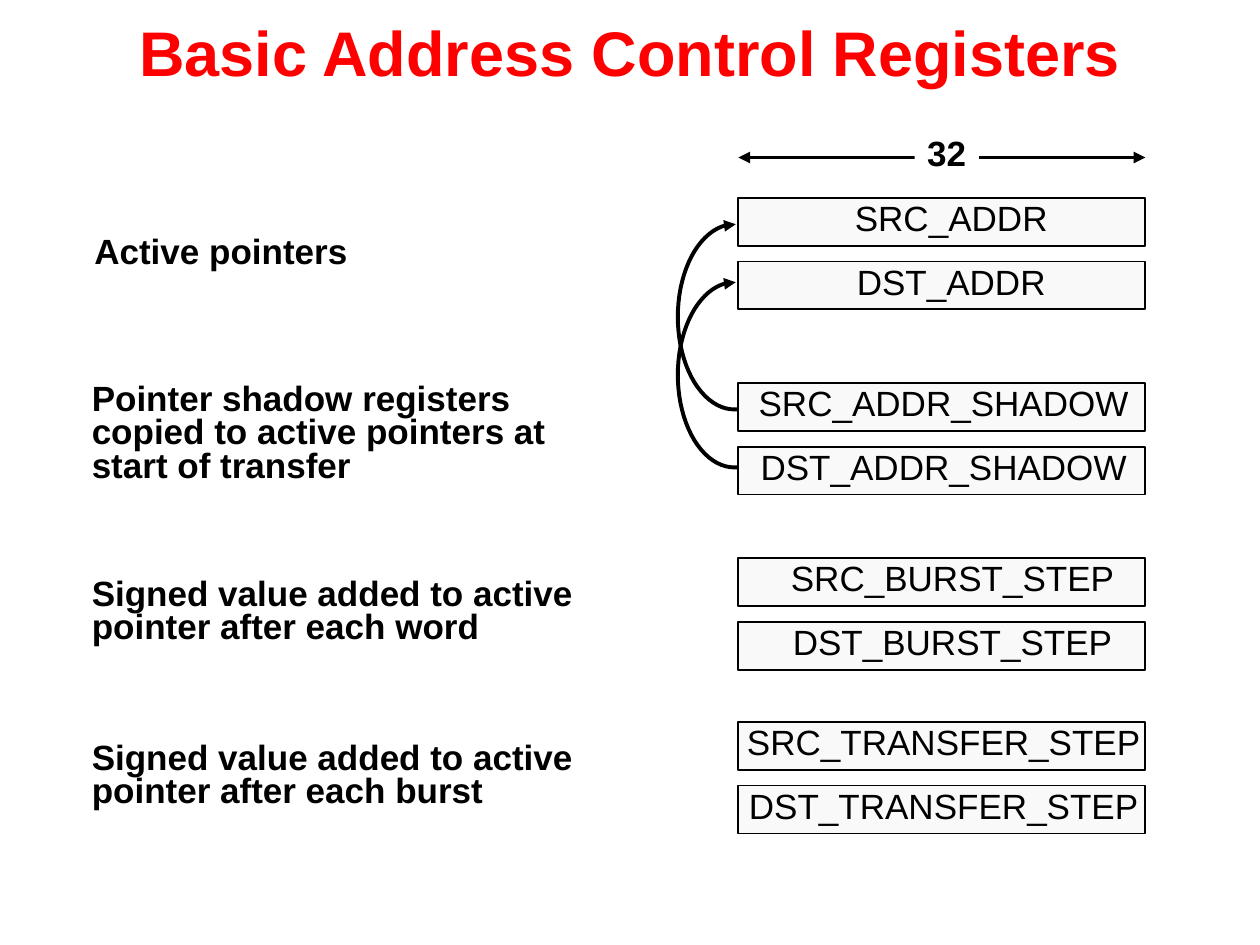
from math import cos, pi, sin

from pptx import Presentation
from pptx.dml.color import RGBColor
from pptx.enum.shapes import MSO_CONNECTOR as Link, MSO_SHAPE as Shape
from pptx.enum.text import MSO_ANCHOR as Anchor, MSO_AUTO_SIZE as Fit, PP_ALIGN as Align
from pptx.oxml.ns import qn
from pptx.util import Inches, Pt
from lxml.etree import SubElement

RED = RGBColor(0xFF, 0, 0)
BLACK = RGBColor(0, 0, 0)
WHITE = RGBColor(0xFF, 0xFF, 0xFF)
PALE = RGBColor(0xF9, 0xF9, 0xF9)

# The slide is a grid of 100 columns by 75 rows.
COLS, ROWS = 100, 75
CELL = Inches(0.1)
LEFT, WIDE, HIGH = 58.6, 32.3, 3.8
TEXT_H = 3.7
STEP = 5.05

# Stem, top row, text centre column, widths of the SRC and DST texts
PAIRS = [
    ("ADDR", 15.7, 75.5, (17.3, 17)),
    ("ADDR_SHADOW", 30.4, 74.9, (31.4, 31.1)),
    ("BURST_STEP", 44.3, 75.6, (27.7, 27.4)),
    ("TRANSFER_STEP", 57.3, 74.9, (33.3, 33)),
]
NOTES = [
    ("Active pointers", 6.5, 18.4, 23.1, 3.7),
    ("Pointer shadow registers copied to active pointers at start of transfer",
     6.3, 30, 39.9, 9),
    ("Signed value added to active pointer after each word", 6.3, 45.5, 43.2, 6.4),
    ("Signed value added to active pointer after each burst", 6.3, 58.5, 43.2, 6.4),
]


def grid(*cells):
    return [round(n * CELL) for n in cells]


def write(shape, text, size=20, bold=False, align=Align.LEFT, wrap=True, lead=0.8):
    frame = shape.text_frame
    frame.word_wrap = wrap
    frame.vertical_anchor = Anchor.TOP
    para = frame.paragraphs[0]
    para.text = text
    para.alignment = align
    para.line_spacing = lead
    font = para.font
    font.name, font.size, font.bold = "Arial", Pt(size), bold
    font.color.rgb = RED if size > 20 else BLACK
    return frame


def add_rect(shapes, x, y, w, h, fill):
    rect = shapes.add_shape(Shape.RECTANGLE, *grid(x, y, w, h))
    rect.shadow.inherit = False
    rect.fill.solid()
    rect.fill.fore_color.rgb = fill
    return rect


def add_cell(slide, name, y, mid, wide):
    """Group a register's frame with its name."""
    group = slide.shapes.add_group_shape().shapes
    rect = add_rect(group, LEFT, y, WIDE, HIGH, PALE)
    rect.line.color.rgb = BLACK
    rect.line.width = Pt(1)
    box = group.add_textbox(*grid(mid - wide / 2, y + 0.05, wide, TEXT_H))
    frame = write(box, name, align=Align.CENTER, wrap=False)
    frame.auto_size = Fit.SHAPE_TO_FIT_TEXT


def add_note(slide, text, *place):
    box = slide.shapes.add_textbox(*grid(*place))
    write(box, text, bold=True).auto_size = Fit.SHAPE_TO_FIT_TEXT


def ink(shape, *ends):
    """Draw a thick black line with arrowheads at the given ends."""
    shape.line.color.rgb = BLACK
    shape.line.width = Pt(2.25)
    line = shape.line._get_or_add_ln()
    for end in ends:
        SubElement(line, qn(f"a:{end}"), type="triangle")


def add_curve(slide, y):
    """Bend a half ellipse from a shadow register up to its pointer."""
    mid, rx, ry, count = 58.3, 4.5, 7.35, 40
    turns = [pi / 2 + pi * n / count for n in range(count + 1)]
    points = [grid(mid + rx * cos(a), y + ry + ry * sin(a)) for a in turns]
    pen = slide.shapes.build_freeform(*grid(58.5, y + 2 * ry))
    pen.add_line_segments(points + [grid(58.4, y)], close=False)
    curve = pen.convert_to_shape()
    curve.shadow.inherit = False
    curve.fill.background()
    ink(curve, "tailEnd")


def add_width(slide):
    """Show the register width as a double arrow with its number."""
    y = 12.5
    line = slide.shapes.add_connector(
        Link.STRAIGHT, *grid(LEFT, y, LEFT + WIDE, y))
    ink(line, "headEnd", "tailEnd")
    SubElement(line._element.spPr, qn("a:effectLst"))
    rect = add_rect(slide.shapes, 72.6, 10.6, 5.1, TEXT_H, WHITE)
    rect.line.fill.background()
    write(rect, "32", bold=True, wrap=False).auto_size = Fit.SHAPE_TO_FIT_TEXT


def main():
    deck = Presentation()
    deck.slide_width, deck.slide_height = grid(COLS, ROWS)
    slide = deck.slides.add_slide(deck.slide_layouts[6])
    title = slide.shapes.add_textbox(*grid(0, 0, COLS, 8.1))
    write(title, "Basic Address Control Registers", 36, True, Align.CENTER,
          lead=1).vertical_anchor = Anchor.MIDDLE
    for stem, top, mid, widths in PAIRS:
        for n, side in enumerate(("SRC", "DST")):
            add_cell(slide, f"{side}_{stem}", top + n * STEP, mid, widths[n])
    for note in NOTES:
        add_note(slide, *note)
    for top in (17.8, 22.4):
        add_curve(slide, top)
    add_width(slide)
    deck.save("out.pptx")


if __name__ == "__main__":
    main()
